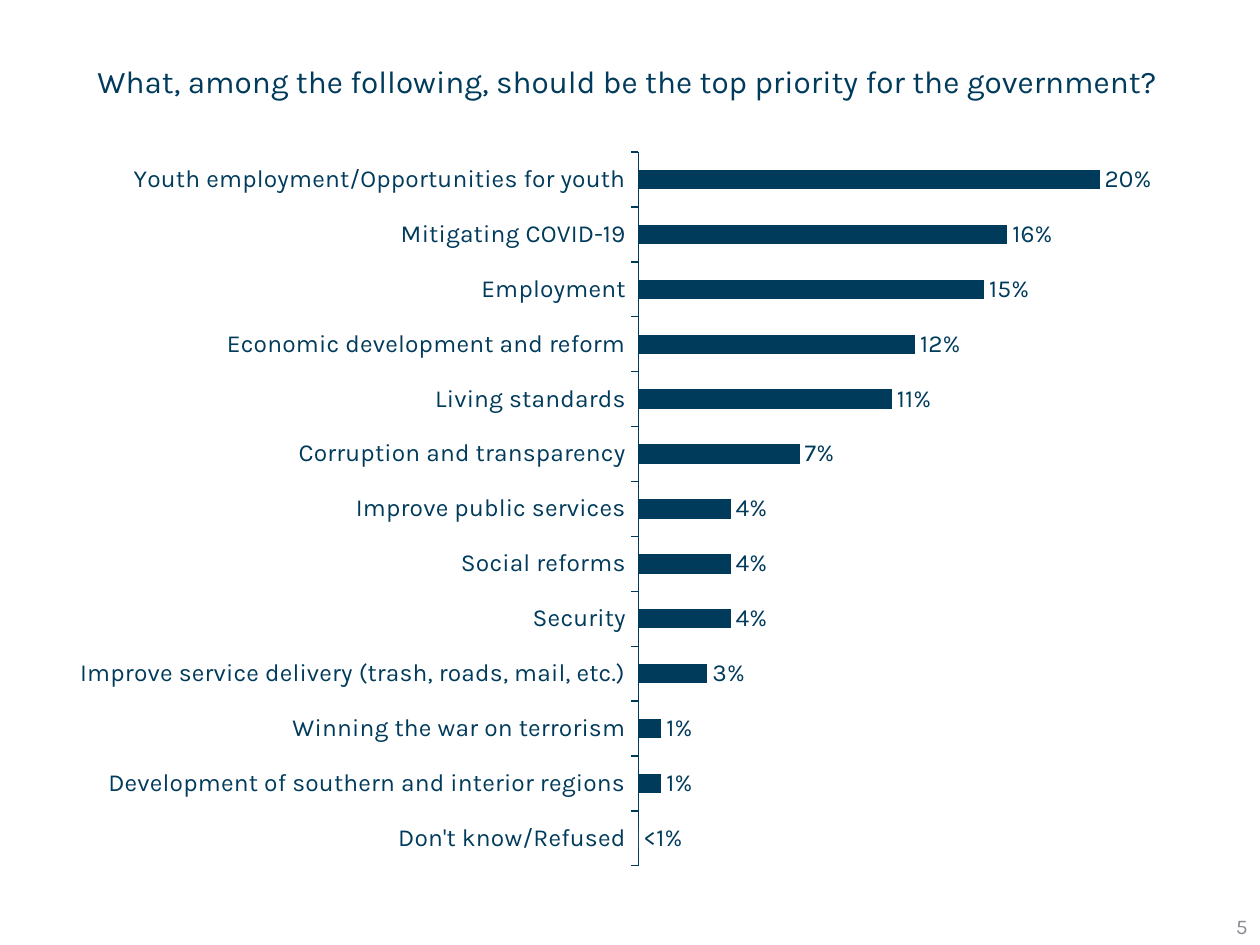
from dataclasses import dataclass

from lxml import etree
from pptx import Presentation
from pptx import util as u
from pptx.chart.data import CategoryChartData
from pptx.dml.color import RGBColor
from pptx.enum import chart as ch
from pptx.enum import text
from pptx.oxml.ns import qn

EMU_PER_PX = 9144
FONT = "Karla"
NAVY = RGBColor(0x00, 0x3B, 0x5C)
SILVER = RGBColor(0xAD, 0xAD, 0xB0)
GREY = RGBColor(0x8C, 0x8E, 0x95)


def px(length: int) -> u.Emu:
    return u.Emu(length * EMU_PER_PX)


@dataclass(frozen=True)
class Box:
    left: int
    top: int
    width: int
    height: int

    def emu(self) -> tuple:
        return tuple(px(n) for n in (self.left, self.top, self.width, self.height))


@dataclass(frozen=True)
class Caption:
    wording: str
    box: Box
    size: int
    color: RGBColor
    align: text.PP_ALIGN
    spacing: float = 1.0


@dataclass(frozen=True)
class Priority:
    name: str
    share: float
    color: RGBColor = NAVY
    label: str = ""


CAPTIONS = (
    Caption("What, among the following, should be the top priority for the government?",
            Box(31, 37, 934, 58), 18, NAVY, text.PP_ALIGN.CENTER, 0.9),
    Caption("5", Box(775, 720, 225, 30), 12, GREY, text.PP_ALIGN.RIGHT),
)

PRIORITIES = (
    Priority("Don't know/Refused", 0, SILVER, "<1%"),
    Priority("Development of southern and interior regions", 0.01),
    Priority("Winning the war on terrorism", 0.01),
    Priority("Improve service delivery (trash, roads, mail, etc.)", 0.03),
    Priority("Security", 0.04),
    Priority("Social reforms", 0.04),
    Priority("Improve public services", 0.04),
    Priority("Corruption and transparency", 0.07),
    Priority("Living standards", 0.11),
    Priority("Economic development and reform", 0.12),
    Priority("Employment", 0.15),
    Priority("Mitigating COVID-19", 0.16),
    Priority("Youth employment/Opportunities for youth", 0.2),
)

CHART_BOX = Box(49, 109, 934, 590)
PLOT_SHARE = {"x": 0.49, "y": 0.02, "w": 0.49, "h": 0.96}


def set_font(font, size: int, color: RGBColor) -> None:
    font.name = FONT
    font.size = u.Pt(size)
    font.color.rgb = color


def add_caption(slide, caption: Caption) -> None:
    frame = slide.shapes.add_textbox(*caption.box.emu()).text_frame
    frame.word_wrap = True
    frame.vertical_anchor = text.MSO_ANCHOR.MIDDLE
    paragraph = frame.paragraphs[0]
    paragraph.text = caption.wording
    paragraph.alignment = caption.align
    paragraph.line_spacing = caption.spacing
    set_font(paragraph.font, caption.size, caption.color)


def fix_plot_area(chart) -> None:
    plot_area = chart._chartSpace.chart.plotArea
    for old in plot_area.findall(qn("c:layout")):
        plot_area.remove(old)
    layout = etree.Element(qn("c:layout"))
    manual = etree.SubElement(layout, qn("c:manualLayout"))
    settings = {"layoutTarget": "inner", "xMode": "edge", "yMode": "edge", **PLOT_SHARE}
    for tag, value in settings.items():
        etree.SubElement(manual, qn(f"c:{tag}")).set("val", str(value))
    plot_area.insert(0, layout)


def add_priorities_chart(slide, priorities: tuple[Priority, ...]) -> None:
    shares = CategoryChartData(number_format="0%")
    shares.categories = [p.name for p in priorities]
    shares.add_series("Series 1", [p.share for p in priorities])
    chart = slide.shapes.add_chart(
        ch.XL_CHART_TYPE.BAR_CLUSTERED, *CHART_BOX.emu(), shares).chart
    chart.has_legend = False
    chart.has_title = False
    set_font(chart.font, 14, NAVY)

    names = chart.category_axis
    names.major_tick_mark = ch.XL_TICK_MARK.OUTSIDE
    names.format.line.color.rgb = NAVY
    names.format.line.width = u.Pt(0.75)
    set_font(names.tick_labels.font, 14, NAVY)

    scale = chart.value_axis
    scale.minimum_scale, scale.maximum_scale = 0, 0.25
    scale.has_major_gridlines = False
    scale.visible = False

    plot = chart.plots[0]
    plot.gap_width = 182
    plot.vary_by_categories = False
    bars = plot.series[0]
    bars.format.fill.solid()
    bars.format.fill.fore_color.rgb = NAVY
    labels = bars.data_labels
    labels.show_value = True
    labels.number_format = "0%"
    labels.number_format_is_linked = False
    labels.position = ch.XL_LABEL_POSITION.OUTSIDE_END
    set_font(labels.font, 14, NAVY)

    for index, priority in enumerate(priorities):
        if priority.color != NAVY:
            fill = bars.points[index].format.fill
            fill.solid()
            fill.fore_color.rgb = priority.color
        if priority.label:
            label = bars.points[index].data_label
            paragraph = label.text_frame.paragraphs[0]
            paragraph.text = priority.label
            set_font(paragraph.font, 14, NAVY)
            label.position = ch.XL_LABEL_POSITION.OUTSIDE_END
    fix_plot_area(chart)


def main() -> None:
    deck = Presentation()
    deck.slide_width, deck.slide_height = px(1000), px(750)
    slide = deck.slides.add_slide(deck.slide_layouts[6])
    for caption in CAPTIONS:
        add_caption(slide, caption)
    add_priorities_chart(slide, PRIORITIES)
    deck.save("out.pptx")


if __name__ == "__main__":
    main()
